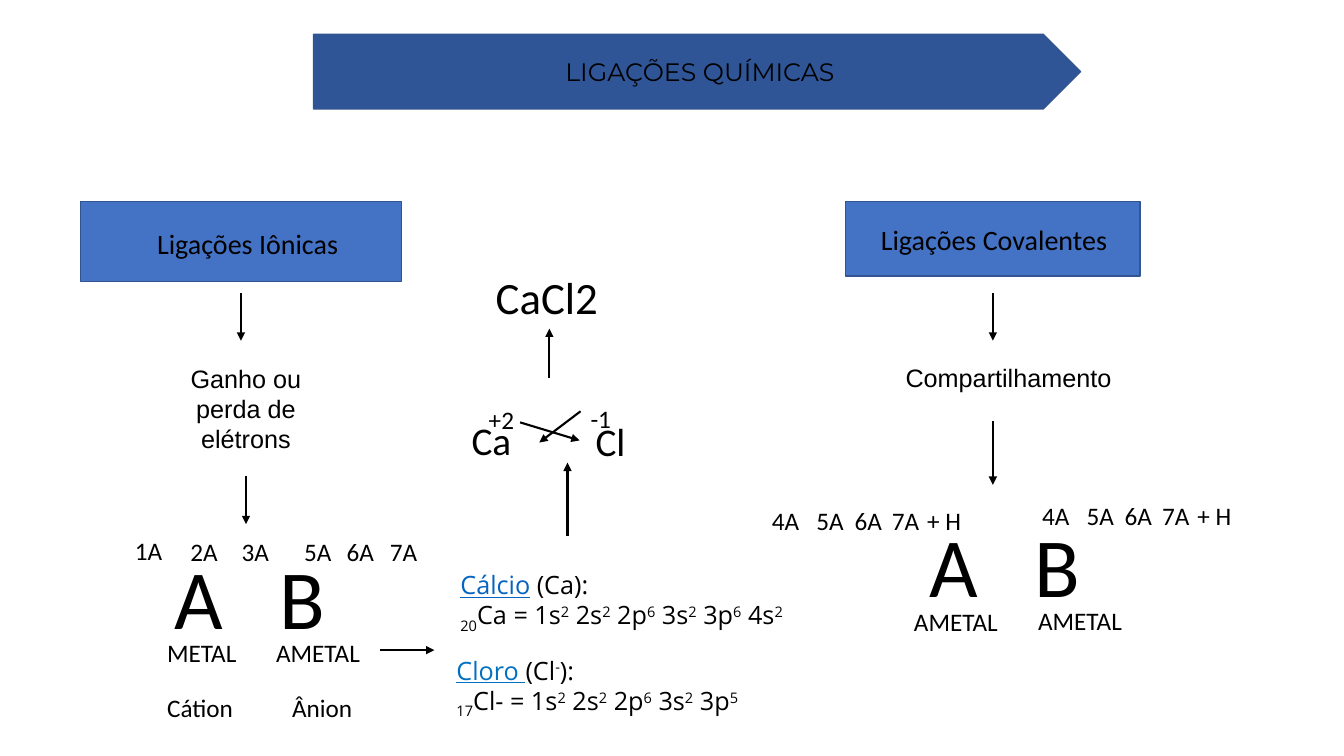
from dataclasses import dataclass

from lxml.etree import SubElement
from pptx import Presentation
from pptx.dml.color import RGBColor
from pptx.enum.shapes import MSO_CONNECTOR as Connector, MSO_SHAPE as Preset
from pptx.enum.text import MSO_AUTO_SIZE as AutoSize, PP_ALIGN as Align
from pptx.oxml.ns import qn
from pptx.slide import Slide
from pptx.util import Pt

BLACK = RGBColor(0x00, 0x00, 0x00)
TITLE_BLUE = RGBColor(0x2F, 0x55, 0x97)
HEADING_BLUE = RGBColor(0x44, 0x72, 0xC4)
OUTLINE_BLUE = RGBColor(0x32, 0x54, 0x91)
CALCIUM_BLUE = RGBColor(0x05, 0x63, 0xC1)
CHLORINE_BLUE = RGBColor(0x00, 0x70, 0xC0)
SUPERSCRIPT = "30000"
SUBSCRIPT = "-25000"
LETTER_TAB = 75.4


@dataclass(frozen=True)
class Span:
    text: str
    baseline: str = ""
    color: RGBColor = BLACK
    underline: bool = False


@dataclass(frozen=True)
class Banner:
    preset: Preset
    left: float
    top: float
    width: float
    height: float
    fill: RGBColor


@dataclass(frozen=True)
class Label:
    text: str
    left: float
    top: float
    width: float
    height: float = 28.8
    size: float = 18
    font: str = "Calibri"
    align: Align = Align.LEFT


@dataclass(frozen=True)
class Arrow:
    start_x: float
    start_y: float
    end_x: float
    end_y: float


@dataclass(frozen=True)
class Element:
    left: float
    top: float
    heading: tuple[Span, ...]
    number: str
    symbol: str
    orbitals: str


BANNERS = (
    Banner(Preset.PENTAGON, 223.9, 24.5, 547.9, 53.3, TITLE_BLUE),
    Banner(Preset.RECTANGLE, 57.6, 144, 229, 56.9, HEADING_BLUE),
    Banner(Preset.RECTANGLE, 604.1, 144, 210.2, 53.3, HEADING_BLUE),
)

LABELS = (
    Label("LIGAÇÕES QUÍMICAS", 299.5, 36.7, 401, font="Montserrat", align=Align.CENTER),
    Label("Ligações Iônicas", 105.1, 158.4, 155.5, 31.7, 20),
    Label("Ligações Covalentes", 622.1, 155.5, 197.3, 31.7, 20),
    Label("Compartilhamento", 630, 255.6, 180.7, font="Arial", align=Align.CENTER),
    Label("Ganho ou perda de elétrons", 105.1, 255.6, 141.1, 72.7, font="Arial", align=Align.CENTER),
    Label("A\tB", 117.4, 385.9, 182.2, 79.9, 60),
    Label("METAL", 112.3, 451.4, 77),
    Label("AMETAL", 190.1, 451.4, 78.5),
    Label("A\tB", 656.6, 362.9, 182.2, 79.9, 60),
    Label("AMETAL", 645.8, 429.8, 91.4),
    Label("AMETAL", 734.4, 429.1, 91.4),
    Label("Cátion", 112.3, 491, 77),
    Label("Ânion", 201.6, 491, 77),
    Label("1A", 89.3, 378.7, 89.3),
    Label("2A", 128.9, 379.4, 89.3),
    Label("3A", 165.6, 379.4, 89.3),
    Label("5A", 210.2, 379.4, 49),
    Label("6A", 240.5, 379.4, 49),
    Label("7A", 271.4, 379.4, 91.4),
    Label("Ca", 329.8, 293.8, 72, 26.6, 28),
    Label("Cl", 418.3, 294.5, 72, 26.6, 28),
    Label("+2", 342, 285.1, 39.6, 18.7),
    Label("-1", 414.7, 284.4, 39.6, 18.7),
    Label("CaCl2", 347, 189.4, 139, 46.1, 32),
)

COVALENT_ROWS = ((737.3, 354.2), (544.3, 357.1))
COVALENT_FAMILIES = (
    ("4A", 0, 92.2),
    ("5A", 31.7, 37.4),
    ("6A", 59, 37.4),
    ("7A", 85.7, 55.4),
    ("+ H", 110.9, 89.3),
)

ARROWS = (
    Arrow(172.1, 209.5, 172.1, 243.4),
    Arrow(709.2, 209.5, 709.2, 243.4),
    Arrow(175.7, 339.8, 175.7, 374.4),
    Arrow(709.2, 301, 709.2, 346.3),
    Arrow(271.4, 464.4, 310.3, 464.4),
    Arrow(405.4, 383, 405.4, 330.5),
    Arrow(371.5, 301.7, 414, 314.6),
    Arrow(414.7, 293.8, 385.2, 316.1),
    Arrow(392.4, 270, 392.4, 234.7),
)

ELEMENTS = (
    Element(321.8, 403.2, (Span("Cálcio", color=CALCIUM_BLUE, underline=True), Span(" (Ca):")),
            "20", "Ca = ", "1s2 2s2 2p6 3s2 3p6 4s2"),
    Element(319, 464.4, (Span("Cloro ", color=CHLORINE_BLUE, underline=True), Span("(Cl"),
                         Span("-", SUPERSCRIPT), Span("):")),
            "17", "Cl- = ", "1s2 2s2 2p6 3s2 3p5"),
)


def draw_banner(slide: Slide, banner: Banner) -> None:
    shape = slide.shapes.add_shape(
        banner.preset, Pt(banner.left), Pt(banner.top), Pt(banner.width), Pt(banner.height))
    shape.shadow.inherit = False
    shape.fill.solid()
    shape.fill.fore_color.rgb = banner.fill
    shape.line.color.rgb = OUTLINE_BLUE
    shape.line.width = Pt(1)


def add_span(paragraph, span: Span, font: str, size: float) -> None:
    run = paragraph.add_run()
    run.text = span.text
    run.font.name = font
    run.font.size = Pt(size)
    run.font.color.rgb = span.color
    if span.underline:
        run.font.underline = True
    if span.baseline:
        run._r.get_or_add_rPr().set("baseline", span.baseline)


def add_frame(slide: Slide, left: float, top: float, width: float, height: float):
    frame = slide.shapes.add_textbox(Pt(left), Pt(top), Pt(width), Pt(height)).text_frame
    frame.word_wrap = True
    frame.auto_size = AutoSize.SHAPE_TO_FIT_TEXT
    return frame


def draw_label(slide: Slide, label: Label) -> None:
    paragraph = add_frame(slide, label.left, label.top, label.width, label.height).paragraphs[0]
    paragraph.alignment = label.align
    if "\t" in label.text:
        tabs = SubElement(paragraph._p.get_or_add_pPr(), qn("a:tabLst"))
        SubElement(tabs, qn("a:tab"), pos=str(Pt(LETTER_TAB)), algn="l")
    add_span(paragraph, Span(label.text), label.font, label.size)


def configuration(element: Element) -> tuple[Span, ...]:
    spans = [Span(element.number, SUBSCRIPT)]
    prefix = element.symbol
    for orbital in element.orbitals.split():
        spans += [Span(prefix + orbital[:-1]), Span(orbital[-1], SUPERSCRIPT)]
        prefix = " "
    return tuple(spans)


def draw_element(slide: Slide, element: Element) -> None:
    frame = add_frame(slide, element.left, element.top, 480.2, 51.1)
    lines = ((frame.paragraphs[0], element.heading),
             (frame.add_paragraph(), configuration(element)))
    for paragraph, spans in lines:
        paragraph.alignment = Align.JUSTIFY
        for span in spans:
            add_span(paragraph, span, "Open Sans", 18)


def draw_arrow(slide: Slide, arrow: Arrow) -> None:
    connector = slide.shapes.add_connector(
        Connector.STRAIGHT, Pt(arrow.start_x), Pt(arrow.start_y), Pt(arrow.end_x), Pt(arrow.end_y))
    connector.line.color.rgb = BLACK
    connector.line.width = Pt(1.5)
    SubElement(connector.line._get_or_add_ln(), qn("a:tailEnd"), type="triangle")
    SubElement(connector._element.spPr, qn("a:effectLst"))


def main() -> None:
    presentation = Presentation()
    presentation.slide_width, presentation.slide_height = Pt(960), Pt(540)
    slide = presentation.slides.add_slide(presentation.slide_layouts[6])
    for banner in BANNERS:
        draw_banner(slide, banner)
    for label in LABELS:
        draw_label(slide, label)
    for left, top in COVALENT_ROWS:
        for family, offset, width in COVALENT_FAMILIES:
            draw_label(slide, Label(family, left + offset, top, width))
    for element in ELEMENTS:
        draw_element(slide, element)
    for arrow in ARROWS:
        draw_arrow(slide, arrow)
    presentation.save("out.pptx")


if __name__ == "__main__":
    main()
